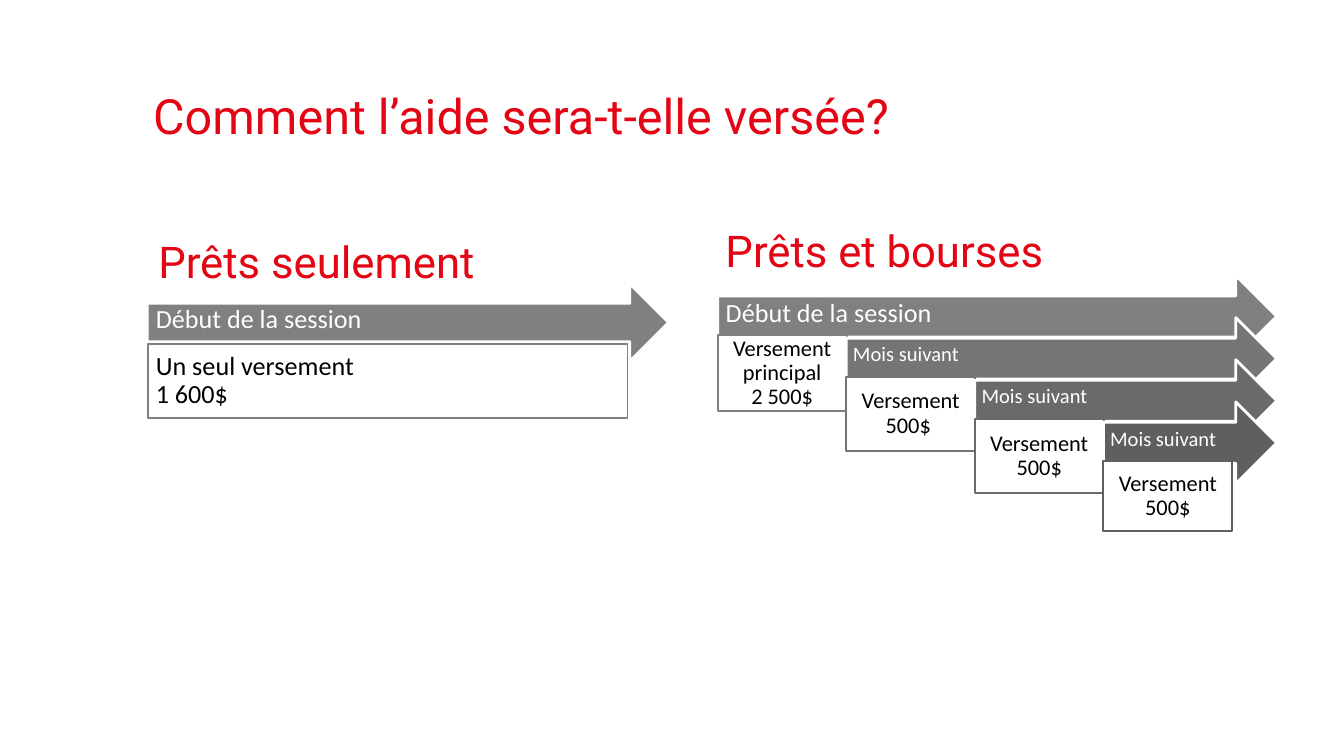
from pptx import Presentation
from pptx.dml.color import RGBColor
from pptx.enum.shapes import MSO_SHAPE
from pptx.enum.text import MSO_ANCHOR, PP_ALIGN
from pptx.util import Inches, Pt

ARROW, RECT = MSO_SHAPE.RIGHT_ARROW, MSO_SHAPE.RECTANGLE
TOP, MID = MSO_ANCHOR.TOP, MSO_ANCHOR.MIDDLE
LEFT, CENTER = PP_ALIGN.LEFT, PP_ALIGN.CENTER

# Content
TITLE = "Comment l’aide sera-t-elle versée?"
LOAN_HEAD = "Prêts seulement"
GRANT_HEAD = "Prêts et bourses"
LOAN = ("Début de la session", "Un seul versement\n1 600$")
# arrow label, payment, arrow grey, label size, box height
STEPS = [
    ("Début de la session", "Versement principal\n2 500$", "808080", 14, 0.57),
    ("Mois suivant", "Versement\n500$ ", "757575", 11, 0.55),
    ("Mois suivant", "Versement\n500$", "6A6A6A", 11, 0.55),
    ("Mois suivant", "Versement\n500$", "5F5F5F", 11, 0.52),
]

THEME = {
    "red": "E30513", "white": "FFFFFF", "black": "000000", "grey": "808080",
    "head": "Roboto", "body": "Calibri",
    "title": 26, "sub": 23.4, "large": 14, "small": 12,
}


def color(name):
    return RGBColor.from_string(THEME.get(name, name))


def write(shape, text, size, ink, font="body", pad=(0.05,) * 4,
          anchor=MID, align=LEFT, gap=0.9):
    frame = shape.text_frame
    form = {"word_wrap": True, "vertical_anchor": anchor}
    sides = ("margin_left", "margin_top", "margin_right", "margin_bottom")
    form.update(zip(sides, map(Inches, pad)))
    for key, val in form.items():
        setattr(frame, key, val)
    para = frame.paragraphs[0]
    para.text = text
    for key, val in {"alignment": align, "line_spacing": gap}.items():
        setattr(para, key, val)
    for run in para.runs:
        for key, val in {"size": Pt(size), "name": THEME[font]}.items():
            setattr(run.font, key, val)
        run.font.color.rgb = color(ink)


def label(slide, place, text, size, pad, gap):
    box = slide.shapes.add_textbox(*map(Inches, place))
    write(box, text, size, "red", "head", pad, TOP, LEFT, gap)


def block(slide, kind, place, fill, line, width):
    shape = slide.shapes.add_shape(kind, *map(Inches, place))
    shape.shadow.inherit = False
    shape.fill.solid()
    shape.fill.fore_color.rgb = color(fill)
    shape.line.color.rgb = color(line)
    shape.line.width = Pt(width)
    return shape


def main():
    deck = Presentation()
    deck.slide_width = Inches(10)
    deck.slide_height = deck.slide_width * 9 // 16
    slide = deck.slides.add_slide(deck.slide_layouts[6])

    # Title
    label(slide, (1.14, 0.69, 8.1, 0.41), TITLE, THEME["title"], (0,) * 4, 0.9)

    # Loans and grants: a staircase of arrows sharing one right edge
    left, top, right = 5.34, 2.05, 9.5
    wide, drop = (8.21 - left) / 3, (2.99 - top) / 3
    for i, (when, pay, grey, size, tall) in enumerate(STEPS):
        x, y = left + i * wide, top + i * drop
        arrow = block(slide, ARROW, (x, y, right - x, 0.61), grey, "white", 1.5)
        inset = 0.06 if i == 0 else 0.05
        write(arrow, when, size, "white", pad=(inset, inset, 0.28, 0.1))
        box = block(slide, RECT, (x, y + 0.44, 0.96, tall), "white", grey, 1)
        write(box, pay, THEME["small"], "black", align=CENTER)

    # Loans only
    when, pay = LOAN
    arrow = block(slide, ARROW, (1.1, 2.12, 3.87, 0.56), "grey", "white", 1)
    write(arrow, when, THEME["large"], "white", pad=(0.06, 0.06, 0.28, 0.09))
    box = block(slide, RECT, (1.1, 2.56, 3.57, 0.55), "white", "grey", 1)
    write(box, pay, THEME["large"], "black", pad=(0.06,) * 4)

    # Headings
    pad = (0.1, 0.05, 0.1, 0.05)
    label(slide, (1.08, 1.7, 3.17, 0.63), LOAN_HEAD, THEME["sub"], pad, 1.0)
    label(slide, (5.3, 1.62, 4.57, 0.63), GRANT_HEAD, THEME["sub"], pad, 1.0)

    deck.save("out.pptx")


if __name__ == "__main__":
    main()
